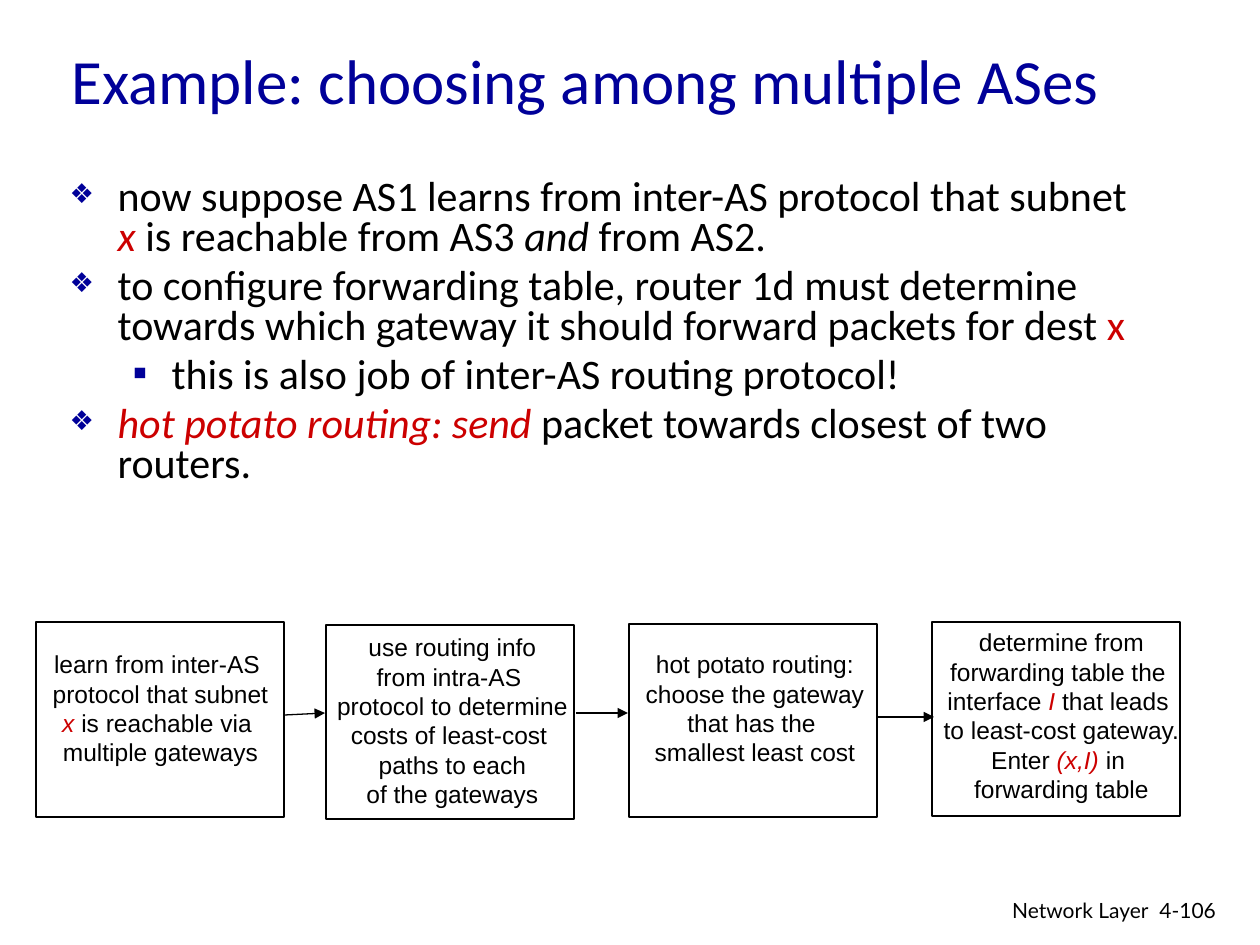
from lxml import etree
from pptx import Presentation
from pptx import util as u
from pptx.dml.color import RGBColor
from pptx.enum import shapes, text
from pptx.oxml.ns import qn

BLACK, RED, NAVY = "000000", "CC0000", "000099"
EM = {"italic": True}
HOT = {"italic": True, "color": RED}

TITLE = "Example: choosing among multiple ASes"
BULLETS = [
    (0, ["now suppose AS1 learns from inter-AS protocol that subnet ", ("x ", HOT),
         "is reachable from AS3 ", ("and", EM), " from AS2."]),
    (0, ["to configure forwarding table, router 1d must determine towards which "
         "gateway it should forward packets for dest ", ("x", {"color": RED})]),
    (1, ["this is also job of inter-AS routing protocol!"]),
    (0, [("hot potato routing: send", HOT), " packet towards closest of two routers."]),
]
LEVELS = [
    {"char": "❖", "size": 65, "left": 48, "hang": 48},
    {"char": "▪", "size": 100, "left": 102, "hang": 39},
]
STEPS = [
    {"box": (36, 622, 248, 195), "label": (39, 643, 243, 131), "wrap": False,
     "lines": [["learn from inter-AS "], ["protocol that subnet "],
               [("x ", HOT), "is reachable via "], ["multiple gateways"]]},
    {"box": (326, 625, 248, 194), "label": (307, 626, 291, 192), "wrap": True,
     "lines": [["use routing info"], ["from intra-AS "], ["protocol to determine"],
               ["costs of least-cost "], ["paths to each"], ["of the gateways"]]},
    {"box": (629, 624, 248, 193), "label": (631, 643, 248, 130), "wrap": True,
     "lines": [["hot potato routing:"], ["choose the gateway"], ["that has the "],
               ["smallest least cost"]]},
    {"box": (932, 622, 248, 194), "label": (930, 621, 263, 190), "wrap": False,
     "lines": [["determine from"], ["forwarding table the "],
               ["interface", (" I ", HOT), "that leads "], ["to least-cost gateway. "],
               ["Enter ", ("(x,I) ", HOT), "in "], ["forwarding table"]]},
]
ARROWS = [(285, 715, 325, 713), (576, 713, 628, 713), (878, 717, 934, 717)]
FOOTERS = [
    ("Network Layer", (762, 891, 399, 39), text.PP_ALIGN.RIGHT),
    ("4-106", (1147, 891, 93, 38), text.PP_ALIGN.LEFT),
]


def px(n):
    return round(n * 914400 / 126)


def rgb(color):
    return RGBColor.from_string(color)


def place(sp, box):
    for name, n in zip(("left", "top", "width", "height"), box):
        setattr(sp, name, px(n))


def add_runs(p, runs, **base):
    for run in runs:
        content, style = (run, {}) if isinstance(run, str) else run
        fmt = {"color": BLACK, **base, **style}
        r = p.add_run()
        r.text = content
        r.font.color.rgb = rgb(fmt.pop("color"))
        for name, value in fmt.items():
            setattr(r.font, name, value)


def paragraphs(tf, count):
    return [tf.paragraphs[0]] + [tf.add_paragraph() for _ in range(count - 1)]


def add_label(s, box, lines, align, wrap=True, **base):
    sp = s.shapes.add_textbox(*map(px, box))
    tf = sp.text_frame
    tf.word_wrap = wrap
    for p, runs in zip(paragraphs(tf, len(lines)), lines):
        p.alignment = align
        add_runs(p, runs, **base)


def set_bullet(p, char, size, left, hang):
    pPr = p._p.get_or_add_pPr()
    pPr.set("marL", str(px(left)))
    pPr.set("indent", str(-px(hang)))
    clr = etree.SubElement(pPr, qn("a:buClr"))
    etree.SubElement(clr, qn("a:srgbClr"), val=NAVY)
    etree.SubElement(pPr, qn("a:buSzPct"), val=str(size * 1000))
    etree.SubElement(pPr, qn("a:buFont"), typeface="Arial")
    etree.SubElement(pPr, qn("a:buChar"), char=char)


def add_arrow(s, ends):
    line = s.shapes.add_connector(shapes.MSO_CONNECTOR.STRAIGHT, *map(px, ends))
    line.line.color.rgb = rgb(BLACK)
    line.line.width = u.Pt(0.75)
    etree.SubElement(line.line._get_or_add_ln(), qn("a:tailEnd"), type="triangle")
    etree.SubElement(line._element.spPr, qn("a:effectLst"))


def add_step(s, step):
    sp = s.shapes.add_shape(shapes.MSO_SHAPE.RECTANGLE, *map(px, step["box"]))
    sp.shadow.inherit = False
    sp.fill.background()
    sp.line.color.rgb = rgb(BLACK)
    sp.line.width = u.Pt(0.75)
    add_label(s, step["label"], step["lines"], text.PP_ALIGN.CENTER, step["wrap"],
              name="Arial", size=u.Pt(14))


def main():
    prs = Presentation()
    prs.slide_width, prs.slide_height = px(1260), px(945)
    s = prs.slides.add_slide(prs.slide_layouts[1])

    title, body = s.placeholders
    place(title, (59, 0, 1208, 158))
    tf = title.text_frame
    tf.vertical_anchor = text.MSO_ANCHOR.MIDDLE
    tf.auto_size = text.MSO_AUTO_SIZE.NONE
    tf.paragraphs[0].alignment = text.PP_ALIGN.LEFT
    add_runs(tf.paragraphs[0], [TITLE], name="Calibri", size=u.Pt(36), color=NAVY)

    place(body, (57, 173, 1101, 379))
    tf = body.text_frame
    tf.auto_size = text.MSO_AUTO_SIZE.NONE
    for p, (level, runs) in zip(paragraphs(tf, len(BULLETS)), BULLETS):
        p.level = level
        p.line_spacing = 0.8
        p.space_before = u.Pt(4.8)
        set_bullet(p, **LEVELS[level])
        add_runs(p, runs, name="Calibri", size=u.Pt(24))

    for step in STEPS:
        add_step(s, step)
    for ends in ARROWS:
        add_arrow(s, ends)
    for content, box, align in FOOTERS:
        add_label(s, box, [[content]], align, name="Lato", size=u.Pt(12))

    prs.save("out.pptx")


if __name__ == "__main__":
    main()
